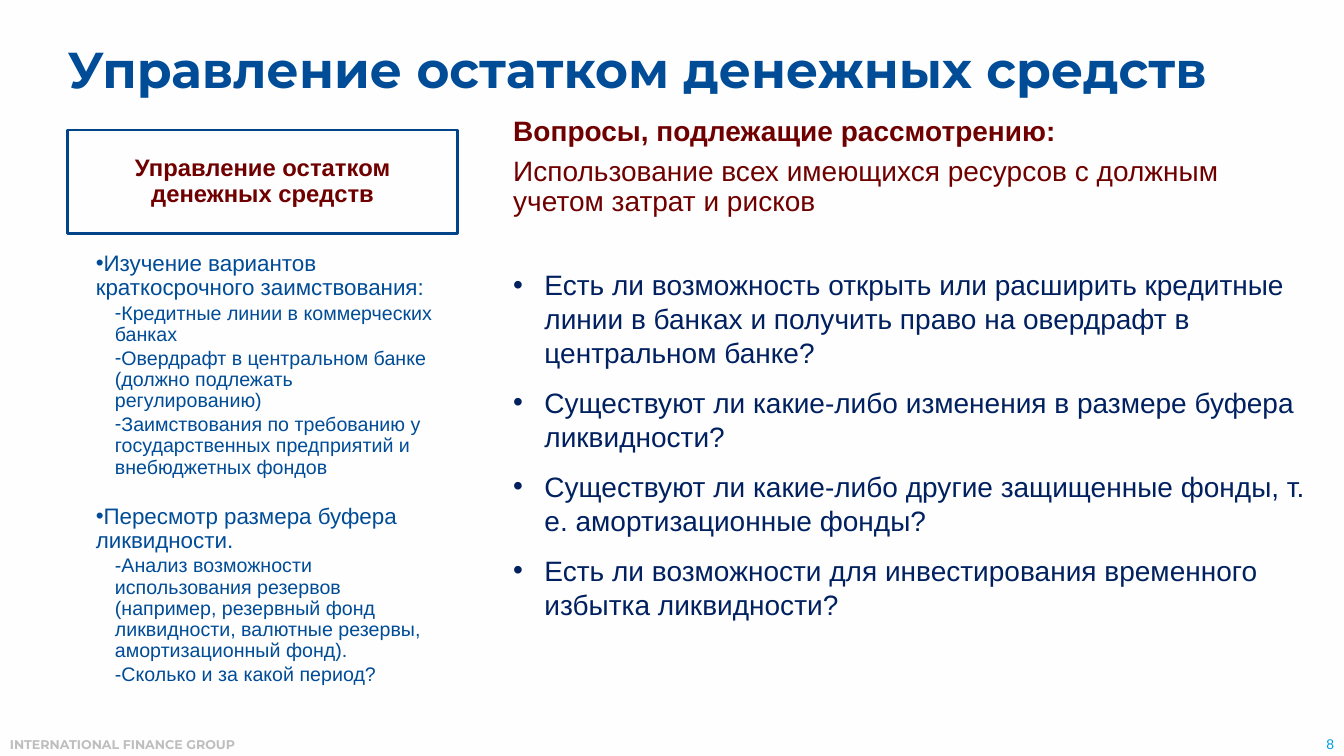
from dataclasses import dataclass

from lxml import etree
from pptx import Presentation
from pptx import util as u
from pptx.dml.color import RGBColor
from pptx.enum import shapes, text
from pptx.oxml import ns

PX = u.Inches(1) // 100
LEFT, CENTER, RIGHT = text.PP_ALIGN.LEFT, text.PP_ALIGN.CENTER, text.PP_ALIGN.RIGHT
TOP, MIDDLE, BOTTOM = text.MSO_ANCHOR.TOP, text.MSO_ANCHOR.MIDDLE, text.MSO_ANCHOR.BOTTOM


@dataclass(frozen=True)
class Theme:
    background: str = "FEFEFE"
    panel: str = "FFFFFF"
    border: str = "004589"
    blue: str = "004C97"
    navy: str = "002060"
    maroon: str = "700000"
    gray: str = "BEBEBE"
    sky: str = "009CDE"
    heading_font: str = "Montserrat"
    body_font: str = "Arial"
    title_size: int = 36
    question_size: int = 20
    header_size: int = 17
    option_size: int = 16
    detail_size: int = 14
    number_size: int = 10
    footer_size: int = 9


THEME = Theme()

OPTIONS = [
    ("Изучение вариантов краткосрочного заимствования:", [
        "Кредитные линии в коммерческих банках",
        "Овердрафт в центральном банке (должно подлежать регулированию)",
        "Заимствования по требованию у государственных предприятий и внебюджетных фондов",
    ]),
    ("Пересмотр размера буфера ликвидности.", [
        "Анализ возможности использования резервов (например, резервный фонд "
        "ликвидности, валютные резервы, амортизационный фонд).",
        "Сколько и за какой период?",
    ]),
]

QUESTIONS = [
    "Есть ли возможность открыть или расширить кредитные линии в банках "
    "и получить право на овердрафт в центральном банке?",
    "Существуют ли какие-либо изменения в размере буфера ликвидности?",
    "Существуют ли какие-либо другие защищенные фонды, т. е. амортизационные фонды?",
    "Есть ли возможности для инвестирования временного избытка ликвидности?",
]


def set_attributes(target, values):
    for name, value in values.items():
        setattr(target, name, value)


def place(shape, left, top, width, height):
    box = {"left": left, "top": top, "width": width, "height": height}
    set_attributes(shape, {name: length * PX for name, length in box.items()})


def set_frame(shape, anchor=TOP, margins=(10, 5, 10, 5)):
    """Margins are left, top, right and bottom in px."""
    sides = ("margin_left", "margin_top", "margin_right", "margin_bottom")
    set_attributes(shape.text_frame, {
        "word_wrap": True,
        "auto_size": text.MSO_AUTO_SIZE.NONE,
        "vertical_anchor": anchor,
        **{side: margin * PX for side, margin in zip(sides, margins)},
    })


def set_bullet(paragraph, character, left, hanging):
    properties = paragraph._p.get_or_add_pPr()
    properties.set("marL", str(left * PX))
    properties.set("indent", str(-hanging * PX))
    if character:
        font = etree.SubElement(properties, ns.qn("a:buFont"))
        font.set("typeface", THEME.body_font)
        bullet = etree.SubElement(properties, ns.qn("a:buChar"))
        bullet.set("char", character)
    else:
        etree.SubElement(properties, ns.qn("a:buNone"))


def add_paragraph(shape, content, size, color, font=THEME.body_font, bold=False,
                  align=LEFT, spacing=1.0, after=0, bullet=None, left=0, hanging=0):
    """Fill the first paragraph while it is empty, then append."""
    frame = shape.text_frame
    paragraph = frame.paragraphs[0] if not frame.text else frame.add_paragraph()
    set_attributes(paragraph, {
        "alignment": align, "line_spacing": spacing,
        "space_before": u.Pt(0), "space_after": u.Pt(after),
    })
    set_bullet(paragraph, bullet, left, hanging)
    run = paragraph.add_run()
    run.text = content
    set_attributes(run.font, {"size": u.Pt(size), "name": font, "bold": bold})
    run.font.color.rgb = RGBColor.from_string(color)


def add_box(slide, box, fill, line=None, opacity=None):
    shape = slide.shapes.add_shape(shapes.MSO_SHAPE.RECTANGLE, 0, 0, 0, 0)
    place(shape, *box)
    shape.shadow.inherit = False
    shape.fill.solid()
    shape.fill.fore_color.rgb = RGBColor.from_string(fill)
    if opacity:
        color = shape._element.spPr.find(".//" + ns.qn("a:srgbClr"))
        etree.SubElement(color, ns.qn("a:alpha")).set("val", str(opacity * 1000))
    if line:
        shape.line.color.rgb = RGBColor.from_string(line)
        shape.line.width = u.Pt(2)
    else:
        shape.line.fill.background()
    return shape


def add_label(slide, box, content, anchor=TOP, **style):
    label = slide.shapes.add_textbox(0, 0, 0, 0)
    place(label, *box)
    set_frame(label, anchor)
    add_paragraph(label, content, **style)


def fill_title(title, content):
    place(title, 67, 11, 1200, 122)
    set_frame(title, MIDDLE, (0, 0, 0, 0))
    add_paragraph(title, content, THEME.title_size, THEME.blue,
                  THEME.heading_font, bold=True, spacing=0.9)


def fill_questions(body):
    place(body, 499, 111, 806, 531)
    set_frame(body)
    lead = {"size": THEME.question_size, "color": THEME.maroon, "spacing": 0.9}
    add_paragraph(body, "Вопросы, подлежащие рассмотрению:", bold=True, after=7, **lead)
    add_paragraph(body, "Использование всех имеющихся ресурсов с должным учетом "
                  "затрат и рисков", after=36, **lead)
    for question in QUESTIONS:
        add_paragraph(body, question, THEME.question_size, THEME.navy,
                      after=12, bullet="•", left=31, hanging=31)


def add_options(slide):
    header = add_box(slide, (67, 129, 387, 103), THEME.background, THEME.border)
    set_frame(header, MIDDLE, (13, 8, 13, 8))
    add_paragraph(header, "Управление остатком денежных средств", THEME.header_size,
                  THEME.maroon, bold=True, align=CENTER, spacing=0.9)

    panel = add_box(slide, (67, 241, 387, 460), THEME.panel, opacity=90)
    set_frame(panel, TOP, (9, 9, 16, 14))
    style = {"color": THEME.blue, "spacing": 0.9}
    for option, details in OPTIONS:
        add_paragraph(panel, option, THEME.option_size, after=2,
                      bullet="•", left=19, **style)
        for detail in details:
            after = 19 if detail == details[-1] else 2
            add_paragraph(panel, detail, THEME.detail_size, after=after,
                          bullet="-", left=38, **style)


def main():
    presentation = Presentation()
    set_attributes(presentation, {"slide_width": 1333 * PX, "slide_height": 750 * PX})
    slide = presentation.slides.add_slide(presentation.slide_layouts[1])
    slide.background.fill.solid()
    slide.background.fill.fore_color.rgb = RGBColor.from_string(THEME.background)

    fill_title(slide.shapes.title, "Управление остатком денежных средств")
    add_options(slide)
    fill_questions(slide.placeholders[1])
    add_label(slide, (0, 726, 1000, 25), "INTERNATIONAL FINANCE GROUP",
              size=THEME.footer_size, color=THEME.gray,
              font=THEME.heading_font, bold=True)
    add_label(slide, (1201, 724, 132, 27), "8", BOTTOM,
              size=THEME.number_size, color=THEME.sky, align=RIGHT)
    presentation.save("out.pptx")


if __name__ == "__main__":
    main()
